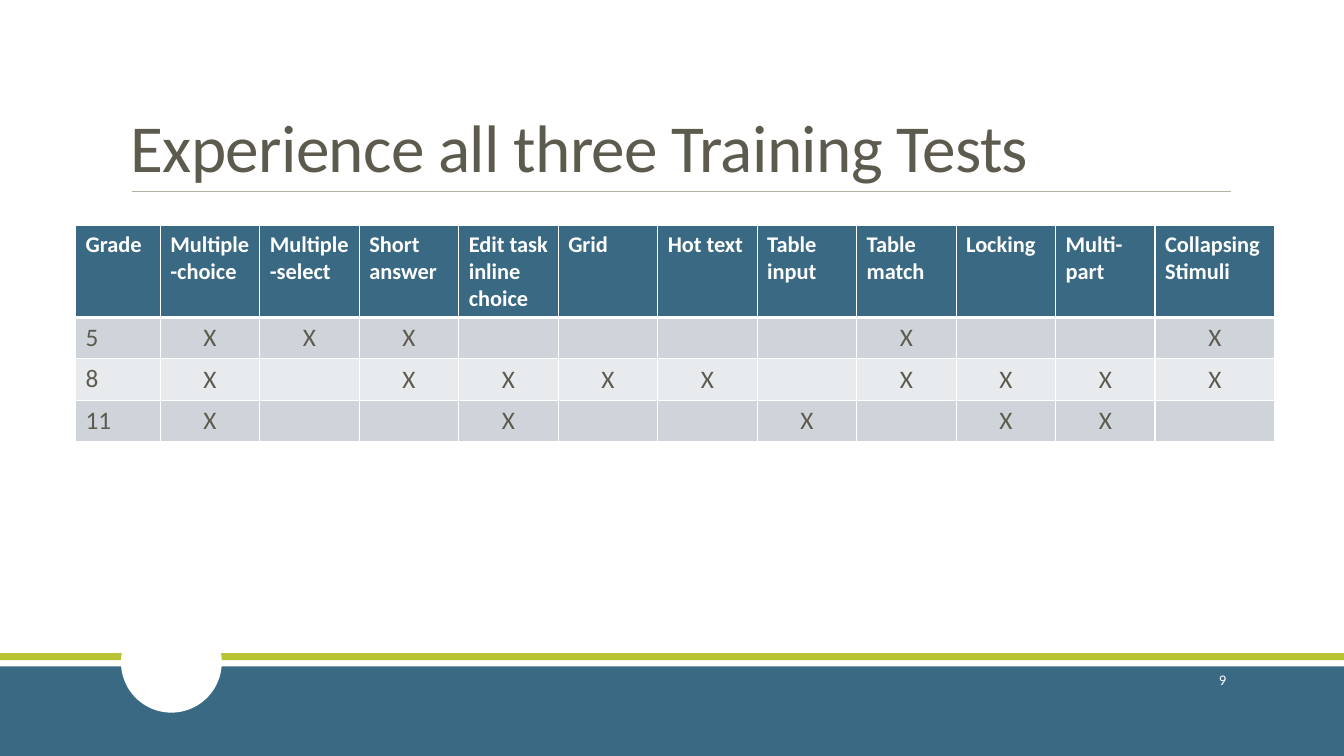
from lxml import etree
from pptx import Presentation
from pptx.dml.color import RGBColor
from pptx.enum.shapes import MSO_CONNECTOR, MSO_SHAPE
from pptx.enum.text import MSO_ANCHOR, PP_ALIGN
from pptx.oxml.ns import qn
from pptx.util import Inches, Pt

RECTANGLE, ELLIPSE = MSO_SHAPE.RECTANGLE, MSO_SHAPE.OVAL
STRAIGHT = MSO_CONNECTOR.STRAIGHT
TOP, MIDDLE, BOTTOM = MSO_ANCHOR.TOP, MSO_ANCHOR.MIDDLE, MSO_ANCHOR.BOTTOM
LEFT, CENTER, RIGHT = PP_ALIGN.LEFT, PP_ALIGN.CENTER, PP_ALIGN.RIGHT

WHITE = RGBColor(0xFF, 0xFF, 0xFF)
BLUE = RGBColor(0x3A, 0x69, 0x83)
GREEN = RGBColor(0xB7, 0xC3, 0x33)
BROWN = RGBColor(0x5D, 0x5B, 0x4E)
RULE_GRAY = RGBColor(0xB2, 0xB0, 0xA3)
BAND_DARK = RGBColor(0xCE, 0xD4, 0xD9)
BAND_LIGHT = RGBColor(0xE8, 0xEB, 0xED)
FONT = "Calibri"

ITEM_TYPES = [
    "Multiple-choice", "Multiple-select", "Short answer",
    "Edit task inline choice", "Grid", "Hot text", "Table input",
    "Table match", "Locking", "Multi-part", "Collapsing Stimuli",
]
ITEMS_BY_GRADE = {
    "5": {"Multiple-choice", "Multiple-select", "Short answer",
          "Table match", "Collapsing Stimuli"},
    "8": set(ITEM_TYPES) - {"Multiple-select", "Table input"},
    "11": {"Multiple-choice", "Edit task inline choice", "Table input",
           "Locking", "Multi-part"},
}
COLUMN_WIDTHS = [0.84] + [0.987] * 10 + [1.19]
HEADER_HEIGHT, ROW_HEIGHT = 0.91, 0.41


def write_text(frame, text, size, color, bold=False, align=LEFT,
               line_spacing=None, tracking=None):
    """Write one formatted paragraph into a text frame."""
    para = frame.paragraphs[0]
    para.alignment = align
    if line_spacing:
        para.line_spacing = line_spacing
    span = para.add_run()
    span.text = text
    font = span.font
    font.name, font.size, font.bold = FONT, Pt(size), bold
    font.color.rgb = color
    if tracking:
        font._element.set("spc", str(round(tracking * 100)))


def add_text_box(page, left, top, width, height, text, anchor, **style):
    """Add a wrapping text box holding one paragraph."""
    box = page.shapes.add_textbox(
        Inches(left), Inches(top), Inches(width), Inches(height))
    frame = box.text_frame
    frame.word_wrap = True
    frame.vertical_anchor = anchor
    write_text(frame, text, **style)


def add_plain_shape(page, kind, left, top, width, height, color):
    """Add a filled shape without outline or shadow."""
    shape = page.shapes.add_shape(
        kind, Inches(left), Inches(top), Inches(width), Inches(height))
    shape.shadow.inherit = False
    shape.fill.solid()
    shape.fill.fore_color.rgb = color
    shape.line.fill.background()


def add_rule(page, left, right, top, color, weight):
    """Add a horizontal line without shadow."""
    rule = page.shapes.add_connector(
        STRAIGHT, Inches(left), Inches(top), Inches(right), Inches(top))
    rule.line.color.rgb = color
    rule.line.width = Pt(weight)
    etree.SubElement(rule._element.spPr, qn("a:effectLst"))


def set_borders(cell, color, **weights):
    """Draw the cell borders, given as points by side letter."""
    properties = cell._tc.get_or_add_tcPr()
    for side in "LRTB":
        line = etree.SubElement(properties, qn(f"a:ln{side}"),
                                w=str(Pt(weights.get(side, 1))))
        fill = etree.SubElement(line, qn("a:solidFill"))
        etree.SubElement(fill, qn("a:srgbClr"), val=str(color))


def fill_cell(cell, text, fill, anchor=TOP, borders=None, **style):
    """Set the borders, fill and text of a table cell."""
    set_borders(cell, WHITE, **(borders or {}))
    cell.fill.solid()
    cell.fill.fore_color.rgb = fill
    cell.vertical_anchor = anchor
    if text:
        write_text(cell.text_frame, text, **style)


def add_test_table(page, left, top):
    """Add the table of item types found in each grade's test."""
    row_count = len(ITEMS_BY_GRADE) + 1
    height = HEADER_HEIGHT + ROW_HEIGHT * len(ITEMS_BY_GRADE)
    table = page.shapes.add_table(
        row_count, len(COLUMN_WIDTHS), Inches(left), Inches(top),
        Inches(sum(COLUMN_WIDTHS)), Inches(height)).table
    for column, width in zip(table.columns, COLUMN_WIDTHS):
        column.width = Inches(width)
    for index, row in enumerate(table.rows):
        row.height = Inches(ROW_HEIGHT if index else HEADER_HEIGHT)

    for column, heading in enumerate(["Grade"] + ITEM_TYPES):
        fill_cell(table.cell(0, column), heading, BLUE, borders={"B": 3},
                  size=16, color=WHITE, bold=True)
    for row, (grade, items) in enumerate(ITEMS_BY_GRADE.items(), start=1):
        band = BAND_DARK if row % 2 else BAND_LIGHT
        borders = {"T": 3} if row == 1 else {}
        fill_cell(table.cell(row, 0), grade, band, borders=borders,
                  size=18, color=BROWN)
        for column, item in enumerate(ITEM_TYPES, start=1):
            fill_cell(table.cell(row, column), "X" if item in items else "",
                      band, anchor=MIDDLE, borders=borders,
                      size=18, color=BROWN, align=CENTER)


def main():
    """Build the slide and save the deck."""
    deck = Presentation()
    deck.slide_width, deck.slide_height = Inches(13.33), Inches(7.5)
    page = deck.slides.add_slide(deck.slide_layouts[6])

    add_plain_shape(page, RECTANGLE, 0, 6.61, 13.33, 0.89, BLUE)
    add_plain_shape(page, RECTANGLE, 0, 6.48, 13.33, 0.07, GREEN)
    add_rule(page, 1.31, 12.21, 1.9, RULE_GRAY, 0.5)
    add_plain_shape(page, ELLIPSE, 1.2, 6.07, 1, 1, WHITE)
    add_text_box(page, 10.83, 6.54, 1.43, 0.4, "9", MIDDLE,
                 size=10.5, color=WHITE, align=RIGHT)
    add_text_box(page, 1.2, 0.31, 11, 1.59,
                 "Experience all three Training Tests", BOTTOM,
                 size=48, color=BROWN, line_spacing=0.85, tracking=-0.5)
    add_test_table(page, 0.75, 2.24)

    deck.save("out.pptx")


if __name__ == "__main__":
    main()
